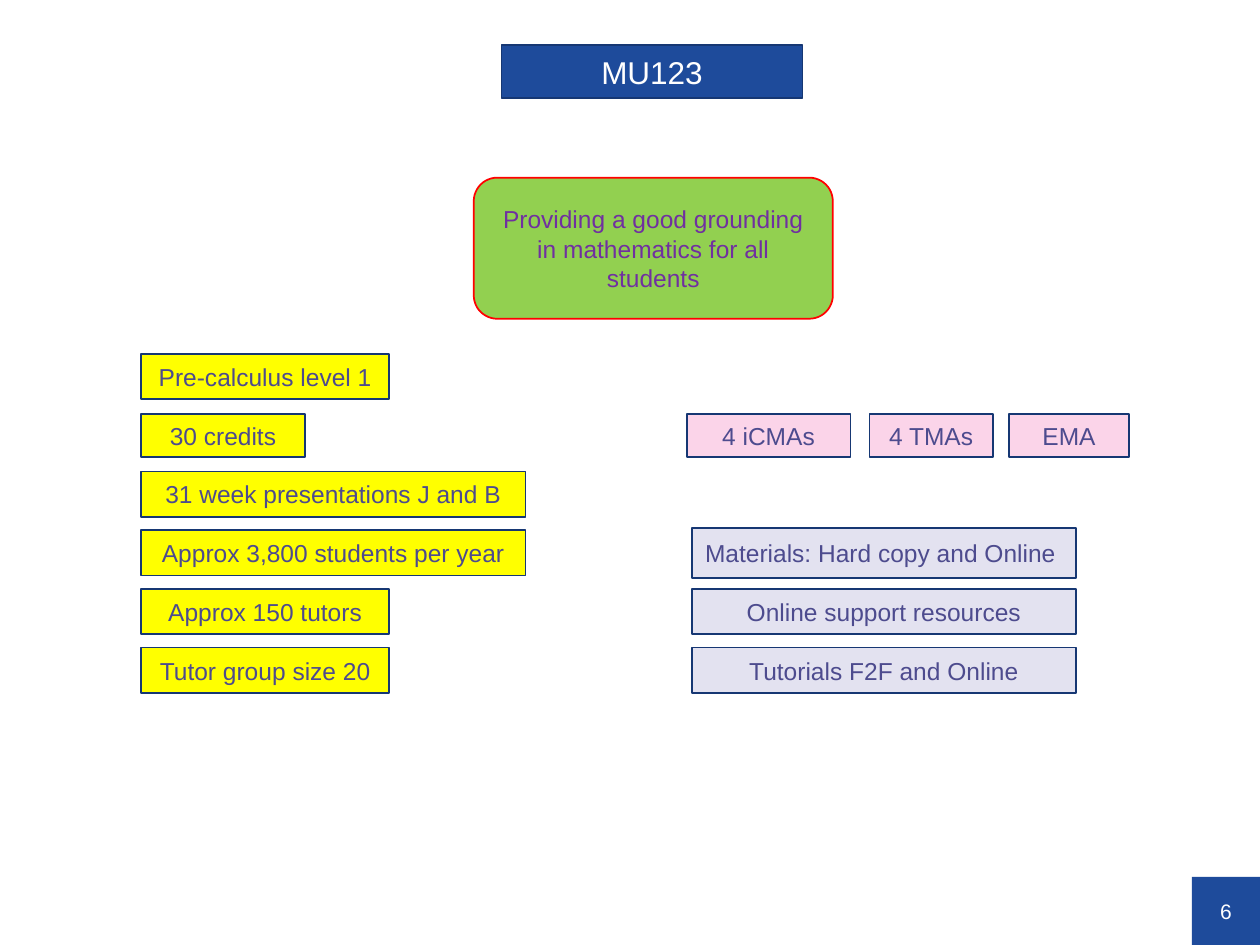
import pptx
import pptx.util
import pptx.dml.color
import pptx.enum.shapes
import pptx.enum.text

RGBColor = pptx.dml.color.RGBColor
Shapes = pptx.enum.shapes.MSO_SHAPE
Inches = pptx.util.Inches

WHITE = RGBColor(0xFF, 0xFF, 0xFF)
BLUE = RGBColor(0x1E, 0x4B, 0x9B)
NAVY = RGBColor(0x16, 0x37, 0x73)
YELLOW = RGBColor(0xFF, 0xFF, 0x00)
PINK = RGBColor(0xFB, 0xD4, 0xE9)
LAVENDER = RGBColor(0xE3, 0xE2, 0xF0)
GREEN = RGBColor(0x92, 0xD0, 0x50)
RED = RGBColor(0xFF, 0x00, 0x00)
PURPLE = RGBColor(0x70, 0x30, 0xA0)
INDIGO = RGBColor(0x4D, 0x4B, 0x8E)

FIRST_ROW, LAST_ROW = 2.99, 5.32
ROW_PITCH = (LAST_ROW - FIRST_ROW) / 5
ROW_HEIGHT, SHORT_HEIGHT, TALL_HEIGHT = 0.36, 0.34, 0.4
LEFT_COLUMN, RIGHT_COLUMN = 1.12, 5.49
WIDE, MEDIUM, NARROW = 3.05, 1.97, 1.3

FACTS = [
    ("Pre-calculus level 1", MEDIUM, ROW_HEIGHT),
    ("30 credits", NARROW, SHORT_HEIGHT),
    ("31 week presentations J and B", WIDE, ROW_HEIGHT),
    ("Approx 3,800 students per year", WIDE, ROW_HEIGHT),
    ("Approx 150 tutors", MEDIUM, ROW_HEIGHT),
    ("Tutor group size 20", MEDIUM, ROW_HEIGHT),
]
ASSESSMENTS = [
    ("4 iCMAs", 5.45, NARROW),
    ("4 TMAs", 6.9, 0.98),
    ("EMA", 8.01, 0.95),
]
RESOURCES = [
    ("Materials: Hard copy and Online ", TALL_HEIGHT),
    ("Online support resources", ROW_HEIGHT),
    ("Tutorials F2F and Online", ROW_HEIGHT),
]


def write_text(shape, text, size=14, color=INDIGO, inset=None):
    frame = shape.text_frame
    frame.word_wrap = True
    frame.auto_size = pptx.enum.text.MSO_AUTO_SIZE.NONE
    frame.vertical_anchor = pptx.enum.text.MSO_ANCHOR.MIDDLE
    if inset is not None:
        frame.margin_left = frame.margin_right = Inches(inset)
        frame.margin_top = frame.margin_bottom = Inches(inset)
    paragraph = frame.paragraphs[0]
    paragraph.alignment = pptx.enum.text.PP_ALIGN.CENTER
    run = paragraph.add_run()
    run.text = text
    run.font.name = "Arial"
    run.font.size = pptx.util.Pt(size)
    run.font.color.rgb = color


def paint(shape, fill, line):
    shape.fill.solid()
    shape.fill.fore_color.rgb = fill
    if line is None:
        shape.line.fill.background()
    else:
        shape.line.color.rgb = line
        shape.line.width = pptx.util.Pt(1)


def add_box(slide, text, left, top, width, height, fill, line=NAVY,
            outline=Shapes.RECTANGLE, **text_format):
    shape = slide.shapes.add_shape(
        outline, Inches(left), Inches(top), Inches(width), Inches(height))
    shape.shadow.inherit = False
    paint(shape, fill, line)
    write_text(shape, text, **text_format)


def add_row_box(slide, text, row, left, width, height, fill):
    top = FIRST_ROW + row * ROW_PITCH - height / 2
    add_box(slide, text, left, top, width, height, fill)


def place_title(slide, text, left, top, width, height):
    title = slide.shapes.title
    title.left, title.top = Inches(left), Inches(top)
    title.width, title.height = Inches(width), Inches(height)
    paint(title, BLUE, NAVY)
    write_text(title, text, size=18, color=WHITE)


def main():
    presentation = pptx.Presentation()
    presentation.slide_width = Inches(10)
    presentation.slide_height = Inches(7.5)
    slide = presentation.slides.add_slide(presentation.slide_layouts[5])

    place_title(slide, "MU123", 3.98, 0.36, 2.39, 0.42)
    add_box(slide, "6", 9.46, 6.96, 0.54, 0.54, BLUE, line=None,
            size=12, color=WHITE, inset=0)
    add_box(slide, "Providing a good grounding in mathematics for all students",
            3.76, 1.41, 2.85, 1.12, GREEN, line=RED,
            outline=Shapes.ROUNDED_RECTANGLE, color=PURPLE)

    for row, (text, width, height) in enumerate(FACTS):
        add_row_box(slide, text, row, LEFT_COLUMN, width, height, YELLOW)
    for text, left, width in ASSESSMENTS:
        add_row_box(slide, text, 1, left, width, SHORT_HEIGHT, PINK)
    for row, (text, height) in enumerate(RESOURCES, start=3):
        add_row_box(slide, text, row, RIGHT_COLUMN, WIDE, height, LAVENDER)

    presentation.save("out.pptx")


if __name__ == "__main__":
    main()
